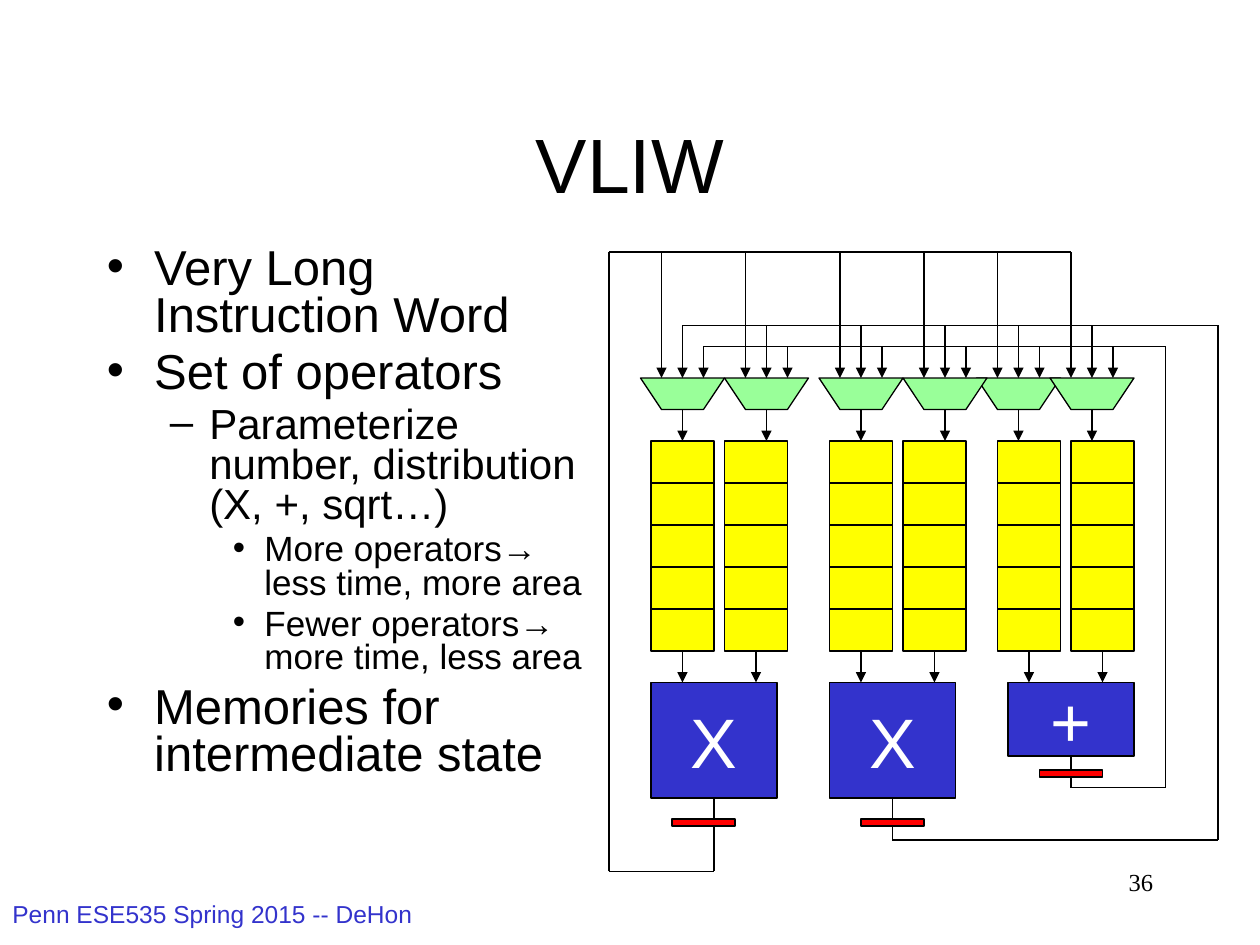
from lxml import etree
from pptx import Presentation
from pptx import util as u
from pptx.dml.color import RGBColor
from pptx.enum import shapes, text
from pptx.oxml.ns import qn

Pt = u.Pt
COLORS = {"ink": "000000", "paper": "FFFFFF", "operator": "3333CC",
          "memory": "FFFF00", "mux": "99FF99", "register": "FF0000"}

# Per level: size, left margin, hanging indent, bullet
LEVELS = [(28, 27, 27, "•"), (24, 58.5, 22.5, "–"), (20, 90, 18, "•")]
BULLETS = [
    (0, "Very Long Instruction Word"),
    (0, "Set of operators"),
    (1, "Parameterize number, distribution (X, +, sqrt…)"),
    (2, "More operators→ less time, more area"),
    (2, "Fewer operators→ more time, less area"),
    (0, "Memories for intermediate state"),
]

# Heights of the rows of the datapath
RAILS = (144, 186, 198)
MUX_TOP, BANK_TOP, OPERATOR_TOP = 216, 252, 390
CELL_WIDTH, CELL_HEIGHT, CELL_COUNT = 36, 24, 5

# Functional units from back to front; "loop" is the path of the result
# from below the operator back to the far end of its rail
UNITS = [
    {"label": "+", "box": (576, OPERATOR_TOP, 72, 42), "banks": (570, 612),
     "muxes": (558, 600), "register": (594, 440),
     "loop": [(612, 450), (666, 450), (666, 198), (402, 198)]},
    {"label": "X", "box": (474, OPERATOR_TOP, 72, 66), "banks": (474, 516),
     "muxes": (468, 516), "register": (492, 468),
     "loop": [(510, 480), (696, 480), (696, 186), (390, 186)]},
    {"label": "X", "box": (372, OPERATOR_TOP, 72, 66), "banks": (372, 414),
     "muxes": (366, 414), "register": (384, 468),
     "loop": [(408, 498), (348, 498), (348, 144), (612, 144)]},
]


def color(name):
    return RGBColor.from_string(COLORS[name])


def style_run(para, size, ink="ink", font="Arial"):
    for span in para.runs:
        span.font.size = Pt(size)
        span.font.name = font
        span.font.color.rgb = color(ink)


def add_text(page, box, words, size, ink="ink", font="Arial",
             align=text.PP_ALIGN.LEFT, anchor=text.MSO_ANCHOR.TOP):
    frame = page.shapes.add_textbox(*map(Pt, box)).text_frame
    frame.word_wrap = True
    frame.vertical_anchor = anchor
    frame.text = words
    frame.paragraphs[0].alignment = align
    style_run(frame.paragraphs[0], size, ink, font)


def add_bullets(page, box):
    frame = page.shapes.add_textbox(*map(Pt, box)).text_frame
    frame.word_wrap = True
    for index, (level, words) in enumerate(BULLETS):
        para = frame.add_paragraph() if index else frame.paragraphs[0]
        size, margin, hanging, bullet = LEVELS[level]
        para.text = words
        para.level = level
        para.line_spacing = 0.8
        para.space_before = Pt(size * 0.2)
        style_run(para, size)
        props = para._p.get_or_add_pPr()
        props.set("marL", str(Pt(margin)))
        props.set("indent", str(-Pt(hanging)))
        etree.SubElement(props, qn("a:buFont")).set("typeface", "Arial")
        etree.SubElement(props, qn("a:buChar")).set("char", bullet)


def paint(shape, fill):
    shape.shadow.inherit = False
    shape.fill.solid()
    shape.fill.fore_color.rgb = color(fill)
    shape.line.color.rgb = color("ink")
    shape.line.width = Pt(0.75)
    return shape


def add_block(page, box, fill):
    rectangle = shapes.MSO_SHAPE.RECTANGLE
    return paint(page.shapes.add_shape(rectangle, *map(Pt, box)), fill)


def add_wire(page, start, end, arrow=False):
    wire = page.shapes.add_connector(
        shapes.MSO_CONNECTOR.STRAIGHT, *map(Pt, (*start, *end)))
    wire.line.color.rgb = color("ink")
    wire.line.width = Pt(0.75)
    if arrow:
        line = wire.line._get_or_add_ln()
        etree.SubElement(line, qn("a:tailEnd")).set("type", "triangle")
    etree.SubElement(wire._element.spPr, qn("a:effectLst"))
    return wire


def add_mux(page, box):
    left, top, width, height = box
    right, bottom, slant = left + width, top + height, width / 4
    outline = page.shapes.build_freeform(Pt(left), Pt(top))
    outline.add_line_segments(
        [(Pt(x), Pt(y)) for x, y in ((left + slant, bottom),
                                     (right - slant, bottom), (right, top))])
    paint(outline.convert_to_shape(), "mux")
    # One input from each rail, left to right
    for step, rail in enumerate(RAILS, 1):
        x = left + step * width / 4 - width / 20 * 0
        add_wire(page, (left + 12 * step + (0 if step else x), rail),
                 (left + 12 * step, top), arrow=True)


def add_bank(page, left, top):
    return [add_block(page, (left, top + row * CELL_HEIGHT,
                             CELL_WIDTH, CELL_HEIGHT), "memory")
            for row in range(CELL_COUNT)]


def add_operator(page, box, label):
    block = add_block(page, box, "operator")
    frame = block.text_frame
    frame.word_wrap = False
    frame.vertical_anchor = text.MSO_ANCHOR.MIDDLE
    frame.text = label
    frame.paragraphs[0].alignment = text.PP_ALIGN.CENTER
    style_run(frame.paragraphs[0], 40, "paper")
    return block


def add_unit(page, unit):
    left, top, width, height = unit["box"]
    operator = add_operator(page, unit["box"], unit["label"])
    for bank_left, mux_left in zip(unit["banks"], unit["muxes"]):
        cells = add_bank(page, bank_left, BANK_TOP)
        add_mux(page, (mux_left, MUX_TOP, 48, 18))
        # Multiplexer to memory
        middle, outlet = bank_left + CELL_WIDTH / 2, mux_left + 24
        wire = add_wire(page, (outlet, MUX_TOP + 18), (outlet, BANK_TOP), arrow=True)
        if outlet == middle:
            wire.end_connect(cells[0], 0)
        # Memory to operator
        bottom = BANK_TOP + CELL_COUNT * CELL_HEIGHT
        wire = add_wire(page, (middle, bottom), (middle, top), arrow=True)
        wire.begin_connect(cells[-1], 2)
    # Result back to the rail
    corners = [(left + width / 2, top + height)] + unit["loop"]
    wires = [add_wire(page, *ends) for ends in zip(corners, corners[1:])]
    wires[0].begin_connect(operator, 2)
    add_block(page, (*unit["register"], 36, 4), "register")


def main():
    deck = Presentation()
    deck.slide_width, deck.slide_height = Pt(720), Pt(540)
    page = deck.slides.add_slide(deck.slide_layouts[6])

    # Title and bullets
    add_text(page, (54, 48, 612, 90), "VLIW", 44,
             align=text.PP_ALIGN.CENTER, anchor=text.MSO_ANCHOR.MIDDLE)
    add_bullets(page, (54, 138, 300, 324))

    # Footer and page number
    add_text(page, (0, 510, 276, 30), "Penn ESE535 Spring 2015 -- DeHon", 14, "operator")
    add_text(page, (516, 492, 150, 36), "36", 14, font="Times New Roman",
             align=text.PP_ALIGN.RIGHT)

    # Datapath
    for unit in UNITS:
        add_unit(page, unit)
    deck.save("out.pptx")


if __name__ == "__main__":
    main()
